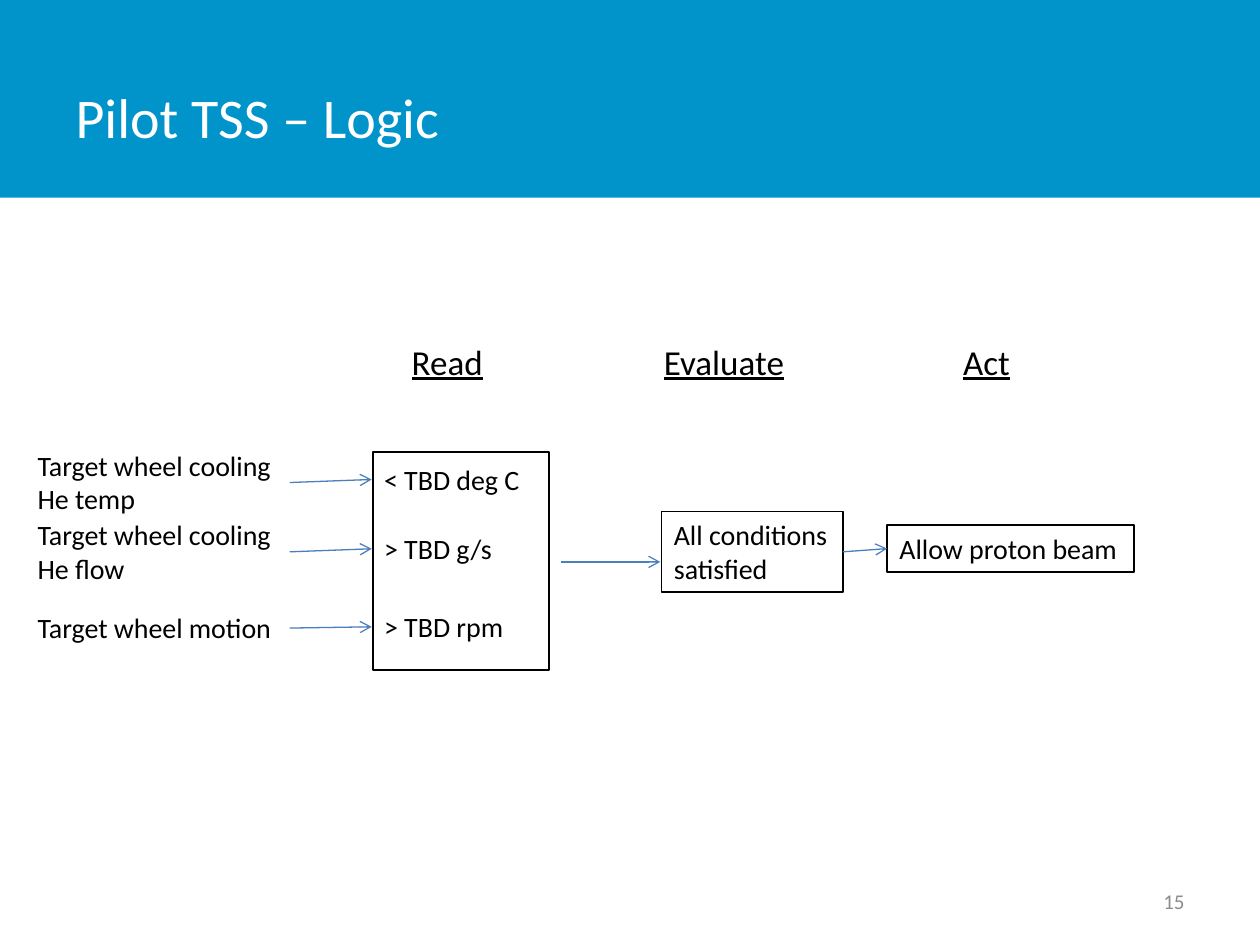
from lxml import etree
from pptx import Presentation
from pptx.dml.color import RGBColor
from pptx.enum.shapes import MSO_CONNECTOR, MSO_SHAPE
from pptx.enum.text import MSO_ANCHOR, MSO_AUTO_SIZE, PP_ALIGN
from pptx.oxml.ns import qn
from pptx.util import Pt

RECT = MSO_SHAPE.RECTANGLE
LINE = MSO_CONNECTOR.STRAIGHT
LEFT, MID, RIGHT = PP_ALIGN.LEFT, PP_ALIGN.CENTER, PP_ALIGN.RIGHT
TOP, CENTER = MSO_ANCHOR.TOP, MSO_ANCHOR.MIDDLE
GROW, FIXED = MSO_AUTO_SIZE.SHAPE_TO_FIT_TEXT, MSO_AUTO_SIZE.NONE
LEFT_SIDE, RIGHT_SIDE = 1, 3
COLORS = {"band": "0094CA", "white": "FFFFFF", "black": "000000",
          "gray": "8C8C8C", "arrow": "4B7EBC"}


def rgb(name):
    return RGBColor.from_string(COLORS[name])


def write(shape, text, size=16, color="black", align=LEFT, anchor=TOP,
          under=False, grow=False):
    frame = shape.text_frame
    frame.text = text
    frame.word_wrap = not grow
    frame.auto_size = GROW if grow else FIXED
    frame.vertical_anchor = anchor
    for para in frame.paragraphs:
        para.alignment = align
        font = para.runs[0].font
        font.name, font.size = "Calibri", Pt(size)
        font.color.rgb = rgb(color)
        font.underline = under


def label(slide, box, text, **style):
    shape = slide.shapes.add_textbox(*map(Pt, box))
    write(shape, text, **style)
    return shape


def block(slide, box, fill=None, line=None):
    shape = slide.shapes.add_shape(RECT, *map(Pt, box))
    shape.shadow.inherit = False
    if fill:
        shape.fill.solid()
        shape.fill.fore_color.rgb = rgb(fill)
    else:
        shape.fill.background()
    if line:
        shape.line.color.rgb = rgb(line)
        shape.line.width = Pt(1)
    else:
        shape.line.fill.background()
    return shape


def arrow(slide, x1, y1, x2, y2):
    link = slide.shapes.add_connector(LINE, *map(Pt, (x1, y1, x2, y2)))
    link.line.color.rgb = rgb("arrow")
    link.line.width = Pt(0.75)
    props = link._element.spPr
    etree.SubElement(props.find(qn("a:ln")), qn("a:tailEnd"), type="arrow")
    etree.SubElement(props, qn("a:effectLst"))
    return link


def join(slide, start, end):
    link = arrow(slide, 0, 0, 0, 0)
    link.begin_connect(start, RIGHT_SIDE)
    link.end_connect(end, LEFT_SIDE)


def header(slide, box, text):
    x, y, w, h = box
    title = slide.shapes.title
    band = block(slide, box, fill="band")
    title._element.addprevious(band._element)
    title.left, title.top = Pt(x + 36), Pt(y + 21.6)
    title.width, title.height = Pt(562.3), Pt(h - 23)
    write(title, text, size=32, color="white", anchor=CENTER)


def heads(slide, box):
    x, y, w, h = box
    for dx, width, text in ((0, 108, "Read"), (146.9, 130.3, "Evaluate"),
                            (277.2, 169.9, "Act")):
        label(slide, (x + dx, y, width, h), text, size=20, align=MID,
              under=True)


def reads(slide, box):
    x, y, w, h = box
    rows = (
        ("Target wheel cooling\nHe temp", -5.8, 46.1, "< TBD deg C", 2.2, 93.6),
        ("Target wheel cooling\nHe flow", 33.8, 46.1, "> TBD g/s", 41.8, 76.3),
        ("Target wheel motion", 87.1, 26.6, "> TBD rpm", 86.4, 83.5),
    )
    for name, top, height, test, drop, width in rows:
        source = label(slide, (x - 198.7, y + top, 151.2, height), name,
                       grow=True)
        check = label(slide, (x - 0.7, y + drop, width, 26.6), test, grow=True)
        join(slide, source, check)
    block(slide, box, line="black")


def result(slide, box):
    x, y, w, h = box
    gate = block(slide, (x, y, 103.7, h), line="black")
    write(gate, "All conditions\nsatisfied", grow=True)
    beam = block(slide, (x + 128.9, y + 7.9, w - 128.9, 26.6), line="black")
    write(beam, "Allow proton beam", grow=True)
    join(slide, gate, beam)
    arrow(slide, x - 57.6, y + 28.8, x - 0.7, y + 28.8)


def main():
    deck = Presentation()
    deck.slide_width, deck.slide_height = Pt(720), Pt(540)
    slide = deck.slides.add_slide(deck.slide_layouts[5])
    header(slide, (0, 0, 720, 113), "Pilot TSS – Logic")
    heads(slide, (201.6, 190.8, 447.1, 45.4))
    reads(slide, (213.1, 258.5, 100.8, 124.6))
    result(slide, (378, 292.3, 270, 46.1))
    label(slide, (516.2, 500.4, 167.8, 28.8), "15", size=12, color="gray",
          align=RIGHT, anchor=CENTER)
    deck.save("out.pptx")


if __name__ == "__main__":
    main()
